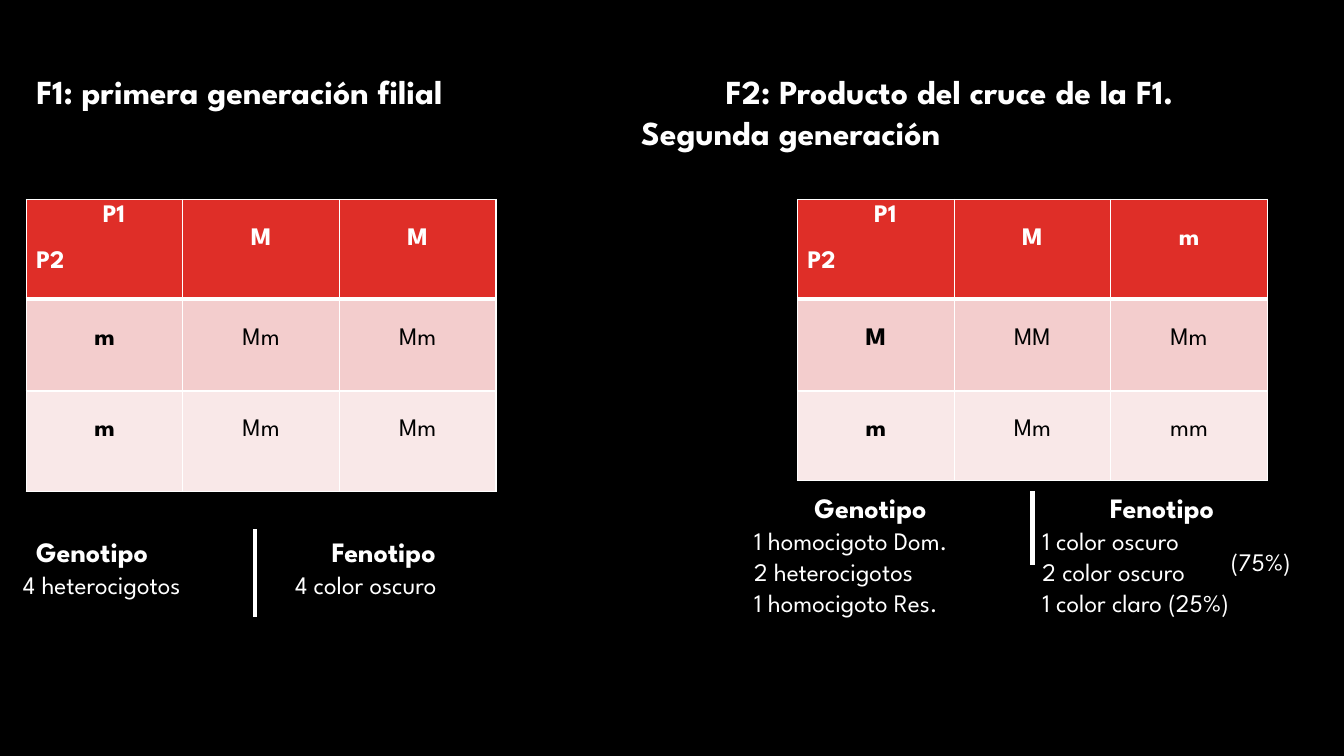
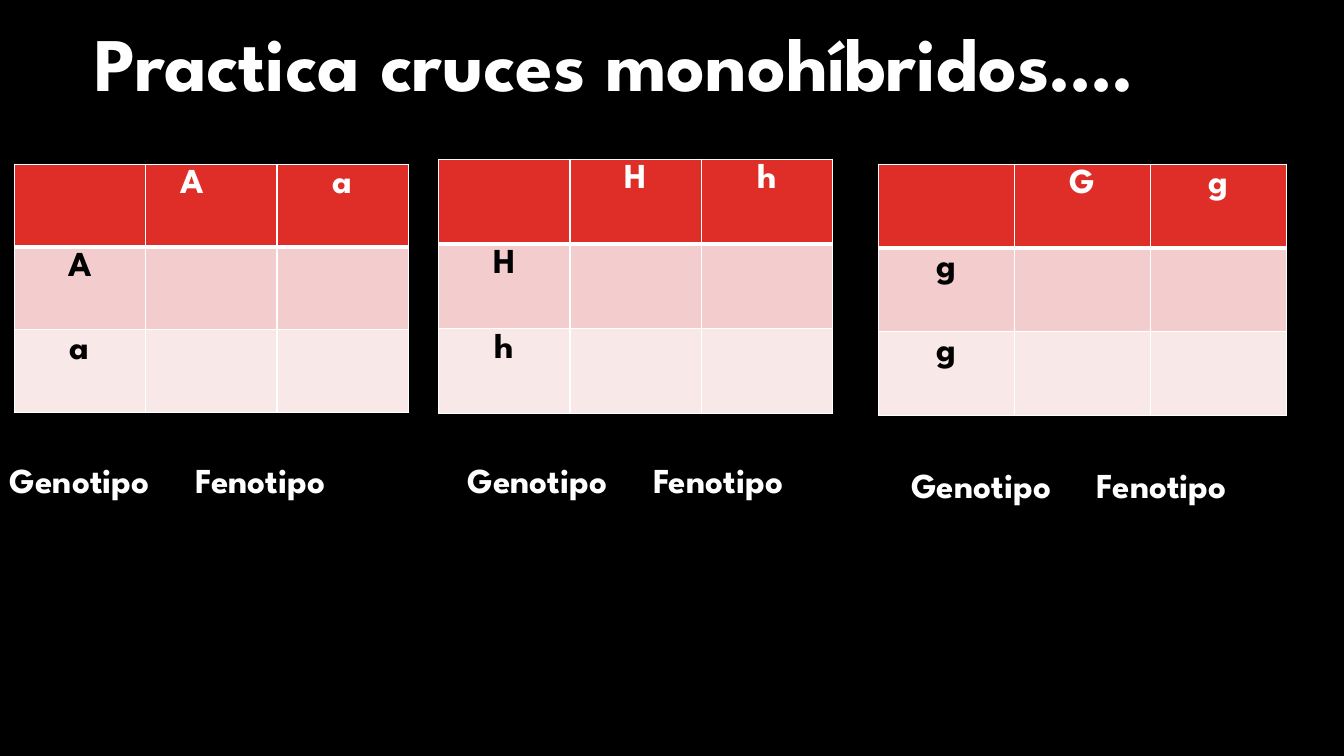
from dataclasses import dataclass

from lxml import etree
from pptx import Presentation
from pptx import util as u
from pptx.dml.color import RGBColor
from pptx.enum import shapes, text
from pptx.oxml import ns


@dataclass(frozen=True)
class Theme:
    """Colours, font and type sizes of the presentation."""
    font: str = "League Spartan"
    black: str = "000000"
    white: str = "FFFFFF"
    red: str = "DF2E28"
    rose: str = "F3CDCD"
    blush: str = "F9E8E8"
    title: int = 54
    practice: int = 25
    heading: int = 24
    label: int = 20
    body: int = 18
    thin: int = 1
    thick: int = 3
    text_leading: float = 1.22
    cell_leading: float = 0.92


THEME = Theme()


def style_paragraph(paragraph, size, bold=False, color=THEME.white,
                    leading=THEME.text_leading, align=text.PP_ALIGN.LEFT):
    """Apply the shared type style to a paragraph and its runs."""
    paragraph.alignment = align
    paragraph.line_spacing = u.Pt(round(size * leading, 2))
    paragraph.space_before = u.Pt(0)
    for run in paragraph.runs:
        run.font.name = THEME.font
        run.font.size = u.Pt(size)
        run.font.bold = bold
        run.font.color.rgb = RGBColor.from_string(color)


def set_text(shape, words, size, bold=False):
    """Fill a shape with wrapped, top-aligned text."""
    frame = shape.text_frame
    frame.text = words
    frame.word_wrap = True
    frame.auto_size = text.MSO_AUTO_SIZE.NONE
    frame.vertical_anchor = text.MSO_ANCHOR.TOP
    for paragraph in frame.paragraphs:
        style_paragraph(paragraph, size, bold)


def add_text(slide, box, words, size, bold=False):
    """Add a text box at left, top, width, height in inches."""
    shape = slide.shapes.add_textbox(*map(u.Inches, box))
    set_text(shape, words, size, bold)
    return shape


def add_title_slide(presentation, box, words, size):
    """Add a title-only slide with its title placed in the box."""
    slide = presentation.slides.add_slide(presentation.slide_layouts[5])
    title = slide.shapes.title
    title.left, title.top, title.width, title.height = map(u.Inches, box)
    set_text(title, words, size, bold=True)
    return slide


def set_borders(cell, top, bottom):
    """Give a cell white borders with the given top and bottom weights."""
    properties = cell._tc.get_or_add_tcPr()
    weights = {"lnL": THEME.thin, "lnR": THEME.thin, "lnT": top, "lnB": bottom}
    for tag, weight in weights.items():
        line = etree.SubElement(properties, ns.qn(f"a:{tag}"), w=str(u.Pt(weight)))
        fill = etree.SubElement(line, ns.qn("a:solidFill"))
        etree.SubElement(fill, ns.qn("a:srgbClr"), val=THEME.white)


def add_punnett(slide, left, top, width, heights, rows, size, inset=0.05):
    """Add a Punnett square with a red header row and tinted body rows."""
    frame = slide.shapes.add_table(
        len(rows), len(rows[0]), *map(u.Inches, (left, top, width, sum(heights))))
    table = frame.table
    fills = (THEME.red, THEME.rose, THEME.blush)
    for column in table.columns:
        column.width = u.Inches(width / len(rows[0]))
    for i, (values, height) in enumerate(zip(rows, heights)):
        table.rows[i].height = u.Inches(height)
        for j, value in enumerate(values):
            cell = table.cell(i, j)
            set_borders(cell, THEME.thick if i == 1 else THEME.thin,
                        THEME.thick if i == 0 else THEME.thin)
            cell.fill.solid()
            cell.fill.fore_color.rgb = RGBColor.from_string(fills[i])
            cell.margin_top = u.Inches(inset)
            cell.text_frame.text = value
            style_paragraph(cell.text_frame.paragraphs[0], size, i == 0 or j == 0,
                            THEME.black if i else THEME.white,
                            THEME.cell_leading, text.PP_ALIGN.CENTER)
    return table


def mark_parents(table):
    """Write the two parent labels in the corner cell of a table."""
    corner = table.cell(0, 0)
    corner.margin_top = u.Inches(0.05)
    corner.text_frame.text = "P1\nP2"
    first, second = corner.text_frame.paragraphs
    for paragraph in (first, second):
        style_paragraph(paragraph, THEME.body, True, leading=THEME.cell_leading)
    first._p.get_or_add_pPr().set("marL", str(u.Inches(0.66)))
    second.space_before = u.Pt(16.5)


def add_result_labels(slide, left, top, gap, size):
    """Add the genotype and phenotype headings, a gap apart."""
    for i, words in enumerate(("Genotipo", "Fenotipo")):
        add_text(slide, (left + i * gap, top, 1.8, 0.52), words, size, bold=True)


def add_divider(slide, left, top, height):
    """Add a thick vertical rule."""
    line = slide.shapes.add_connector(
        shapes.MSO_CONNECTOR.STRAIGHT,
        *map(u.Inches, (left, top, left, top + height)))
    line.line.color.rgb = RGBColor.from_string(THEME.white)
    line.line.width = u.Pt(THEME.thick)
    etree.SubElement(line._element.spPr, ns.qn("a:effectLst"))


def add_generation(slide, left, heights, rows):
    """Add the table of one filial generation."""
    mark_parents(add_punnett(slide, left, 1.98, 4.66, heights, rows,
                             THEME.body, inset=0.28))


def build_generations(presentation):
    """Build the slide that compares the F1 and F2 generations."""
    slide = add_title_slide(presentation, (0.26, 0.65, 5.5, 0.5),
                            "F1: primera generación filial", THEME.heading)
    second = add_text(slide, (6.26, 0.65, 6.8, 0.91),
                      "F2: Producto del cruce de la F1.\nSegunda generación",
                      THEME.heading, bold=True)
    opening = second.text_frame.paragraphs[0]
    opening._p.get_or_add_pPr().set("indent", str(u.Inches(0.84)))

    add_generation(slide, 0.26, (0.99, 0.91, 1.0),
                   (("", "M", "M"), ("m", "Mm", "Mm"), ("m", "Mm", "Mm")))
    add_generation(slide, 7.91, (0.99, 0.91, 0.89),
                   (("", "M", "m"), ("M", "MM", "Mm"), ("m", "Mm", "mm")))

    for left, top, rule_left, rule_top, rule_height in (
            (0.26, 5.25, 2.53, 5.25, 0.87), (7.98, 4.81, 10.24, 4.87, 0.74)):
        add_result_labels(slide, left, top, 2.93, THEME.label)
        add_divider(slide, rule_left, rule_top, rule_height)

    for box, words in (
            ((0.13, 5.59, 2.3, 0.4), "4 heterocigotos"),
            ((2.83, 5.59, 2.3, 0.4), "4 color oscuro"),
            ((7.38, 5.16, 2.85, 1.01),
             "1 homocigoto Dom.\n2 heterocigotos\n1 homocigoto Res."),
            ((10.24, 5.16, 2.85, 1.01),
             "1 color oscuro\n2 color oscuro\n1 color claro (25%)"),
            ((12.11, 5.37, 0.96, 0.4), "(75%)")):
        add_text(slide, box, words, THEME.body)


def build_practice(presentation):
    """Build the practice slide with three empty Punnett squares."""
    slide = add_title_slide(presentation, (0.84, 0.09, 12.4, 1.01),
                            "Practica cruces monohíbridos….", THEME.title)
    crosses = (
        ("Aa", "Aa", 0.14, 1.63, 3.91, 0.82, 0, 4.49),
        ("Hh", "Hh", 4.35, 1.58, 3.91, 0.84, 4.54, 4.49),
        ("Gg", "gg", 8.71, 1.63, 4.05, 0.83, 8.94, 4.54),
    )
    tables = []
    for across, down, left, top, width, height, label_left, label_top in crosses:
        rows = [("", *across)] + [(allele, "", "") for allele in down]
        tables.append(add_punnett(slide, left, top, width, (height,) * 3, rows,
                                  THEME.practice))
        add_result_labels(slide, label_left, label_top, 1.84, THEME.practice)
    tables[0].cell(0, 1).margin_right = u.Inches(0.48)


def main():
    """Create and save the presentation."""
    presentation = Presentation()
    presentation.slide_width = u.Inches(13.33)
    presentation.slide_height = u.Inches(7.5)
    background = presentation.slide_master.background.fill
    background.solid()
    background.fore_color.rgb = RGBColor.from_string(THEME.black)
    build_generations(presentation)
    build_practice(presentation)
    presentation.save("out.pptx")


if __name__ == "__main__":
    main()
